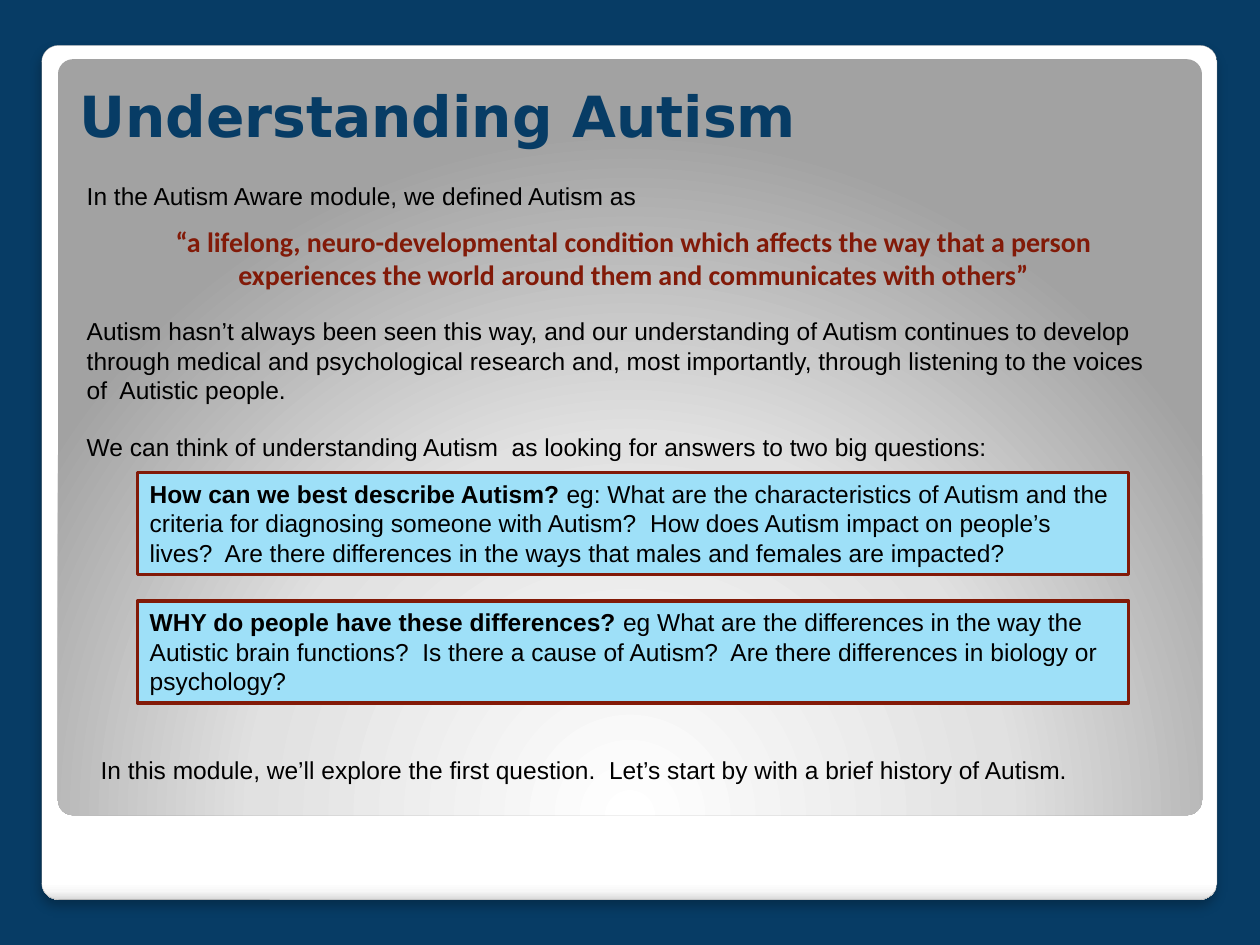
from pptx import Presentation
from pptx.dml.color import RGBColor
from pptx.enum.shapes import MSO_SHAPE
from pptx.enum.text import MSO_ANCHOR, MSO_AUTO_SIZE, PP_ALIGN
from pptx.oxml import parse_xml
from pptx.util import Inches, Pt

RECT, ROUNDED = MSO_SHAPE.RECTANGLE, MSO_SHAPE.ROUNDED_RECTANGLE
TOP, BOTTOM = MSO_ANCHOR.TOP, MSO_ANCHOR.BOTTOM
LEFT, CENTER = PP_ALIGN.LEFT, PP_ALIGN.CENTER
GROW, FIXED = MSO_AUTO_SIZE.SHAPE_TO_FIT_TEXT, MSO_AUTO_SIZE.NONE

NAVY, RUST, SKY, BLACK = "073C65", "821A08", "9EE0F8", "000000"
COLUMNS, ROWS = 100, 75
NS = 'xmlns:a="http://schemas.openxmlformats.org/drawingml/2006/main"'
LINEAR_DOWN = '<a:lin ang="5400000" scaled="0"/>'
GLOW_FROM_BELOW = ('<a:path path="circle"><a:fillToRect l="50000" t="175000" '
                   'r="50000" b="-75000"/></a:path>')
SOFT_SHADOW = (f'<a:outerShdw {NS} blurRad="{Pt(6)}" dist="{Pt(4)}" dir="5400000" '
               'rotWithShape="0"><a:srgbClr val="000000"><a:alpha val="25000"/>'
               '</a:srgbClr></a:outerShdw>')


def rgb(value):
    return RGBColor.from_string(value)


def write(frame, paragraphs, font="Arial", size=14, color=BLACK, bold=False,
          align=LEFT, anchor=TOP, fit=GROW, gap=0):
    """Fill frame with paragraphs, each a list of runs; bold applies to the first run of each."""
    frame.word_wrap, frame.auto_size, frame.vertical_anchor = True, fit, anchor
    for index, runs in enumerate(paragraphs):
        paragraph = frame.add_paragraph() if index else frame.paragraphs[0]
        paragraph.alignment = align
        paragraph.space_before = Pt(gap if index else 0)
        for position, words in enumerate(runs):
            run = paragraph.add_run()
            run.text = words
            run.font.name, run.font.size = font, Pt(size)
            run.font.bold = bold and position == 0
            run.font.color.rgb = rgb(color)


class Deck:
    def __init__(self, background):
        self.presentation = Presentation()
        self.presentation.slide_width = Inches(10)
        self.presentation.slide_height = Inches(7.5)
        self.slide = self.presentation.slides.add_slide(
            self.presentation.slide_layouts[6])
        self.slide.background.fill.solid()
        self.slide.background.fill.fore_color.rgb = rgb(background)

    def place(self, left, top, width, height):
        """Turn grid columns and rows into slide lengths."""
        column = self.presentation.slide_width / COLUMNS
        row = self.presentation.slide_height / ROWS
        return (round(left * column), round(top * row),
                round(width * column), round(height * row))

    def text(self, area, paragraphs, **style):
        box = self.slide.shapes.add_textbox(*self.place(*area))
        write(box.text_frame, paragraphs, **style)

    def panel(self, area, stops, direction, outline=None, shadow=False):
        """Add a rounded panel with a gradient of (percent, colour) stops."""
        panel = self.slide.shapes.add_shape(ROUNDED, *self.place(*area))
        panel.adjustments[0] = 0.02
        panel.shadow.inherit = False
        properties = panel._element.spPr
        if shadow:
            properties[-1].append(parse_xml(SOFT_SHADOW))
        if outline:
            panel.line.color.rgb = rgb(outline)
            panel.line.width = Pt(0.16)
        else:
            panel.line.fill.background()
        colors = "".join(f'<a:gs pos="{percent * 1000}"><a:srgbClr val="{color}"/></a:gs>'
                         for percent, color in stops)
        gradient = parse_xml(f'<a:gradFill {NS} rotWithShape="1"><a:gsLst>{colors}'
                             f'</a:gsLst>{direction}</a:gradFill>')
        properties.find("{*}prstGeom").addnext(gradient)

    def question(self, area, heading, details):
        card = self.slide.shapes.add_shape(RECT, *self.place(*area))
        card.shadow.inherit = False
        card.fill.solid()
        card.fill.fore_color.rgb = rgb(SKY)
        card.line.color.rgb = rgb(RUST)
        card.line.width = Pt(1.75)
        write(card.text_frame, [[heading, details]], bold=True)


def main():
    deck = Deck(NAVY)
    deck.panel((3.3, 3.6, 93.3, 67.8),
               [(0, "FFFFFF"), (98, "FFFFFF"), (99, "F7F7F7"), (100, "DADADA")],
               LINEAR_DOWN, outline="A4A4A4", shadow=True)
    deck.panel((4.6, 4.7, 90.8, 60),
               [(0, "FFFFFF"), (55, "E1E1E1"), (100, "A2A2A2")], GLOW_FROM_BELOW)

    deck.text((5.3, 6, 89.5, 6.3), [["Understanding Autism"]], font="DejaVu Sans",
              size=32.4, color=NAVY, bold=True, anchor=BOTTOM, fit=FIXED)
    deck.text((5.9, 13.9, 87.4, 3.4),
              [["In the Autism Aware module, we defined Autism as"]])
    deck.text((7.4, 17.3, 85.8, 6.4),
              [["“a lifelong, neuro-developmental condition which affects the way that "
                "a person experiences the world around them and communicates with others”"]],
              font="Calibri", size=16, color=RUST, bold=True, align=CENTER)
    deck.text((5.9, 24.6, 87.4, 12.8),
              [["Autism hasn’t always been seen this way, and our understanding of Autism "
                "continues to develop through medical and psychological research and, most "
                "importantly, through listening to the voices of  Autistic people."],
               ["We can think of understanding Autism  as looking for answers to two big "
                "questions:"]], gap=16)

    questions = [
        ("How can we best describe Autism? ",
         "eg: What are the characteristics of Autism and the criteria for diagnosing "
         "someone with Autism?  How does Autism impact on people’s lives?  Are there "
         "differences in the ways that males and females are impacted?"),
        ("WHY do people have these differences? ",
         "eg What are the differences in the way the Autistic brain functions?  Is there "
         "a cause of Autism?  Are there differences in biology or psychology?"),
    ]
    for index, (heading, details) in enumerate(questions):
        deck.question((10.9, 37.5 + 10.2 * index, 78.7, 8.1), heading, details)

    deck.text((7, 59.4, 85.9, 3.4),
              [["In this module, we’ll explore the first question.  Let’s start by with "
                "a brief history of Autism."]])
    deck.presentation.save("out.pptx")


if __name__ == "__main__":
    main()
